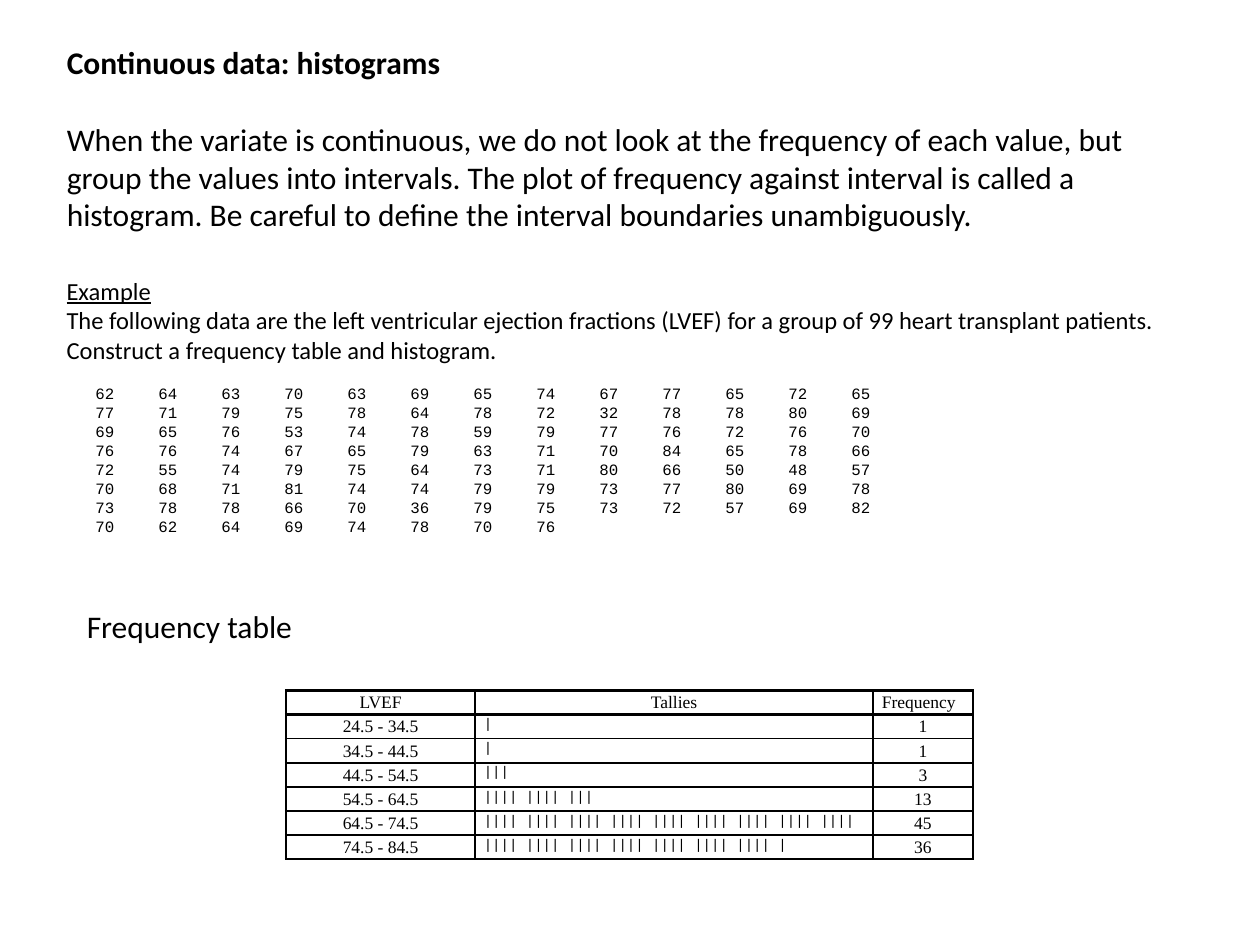
from lxml import etree
from pptx import Presentation, util as u
from pptx.dml.color import RGBColor
from pptx.enum import text
from pptx.oxml.ns import qn

INK = "000000"
LEFT, CENTER, JUSTIFY = text.PP_ALIGN.LEFT, text.PP_ALIGN.CENTER, text.PP_ALIGN.JUSTIFY

TITLE = "Continuous data: histograms"
INTRO = ("When the variate is continuous, we do not look at the frequency of each value, "
         "but group the values into intervals. The plot of frequency against interval is "
         "called a histogram. Be careful to define the interval boundaries unambiguously.")
EXAMPLE = [
    "Example",
    "The following data are the left ventricular ejection fractions (LVEF) for a group of "
    "99 heart transplant patients.",
    "Construct a frequency table and histogram.",
]
FRACTIONS = [
    "62 64 63 70 63 69 65 74 67 77 65 72 65",
    "77 71 79 75 78 64 78 72 32 78 78 80 69",
    "69 65 76 53 74 78 59 79 77 76 72 76 70",
    "76 76 74 67 65 79 63 71 70 84 65 78 66",
    "72 55 74 79 75 64 73 71 80 66 50 48 57",
    "70 68 71 81 74 74 79 79 73 77 80 69 78",
    "73 78 78 66 70 36 79 75 73 72 57 69 82",
    "70 62 64 69 74 78 70 76",
]
TABLE_LABEL = "Frequency table"
HEADINGS = ["LVEF", "Tallies", "Frequency"]
FIRST_BOUND, INTERVAL = 24.5, 10
FREQUENCIES = [1, 1, 3, 13, 45, 36]

COLUMN_WIDTHS = [1.5, 3.16, 0.79]
ROW_HEIGHT = 1.34 / 7
DATA_INDENT, DATA_STEP = 0.23, 0.45

HEADLINE = {"name": "Calibri", "size": u.Pt(18), "bold": True}
BODY = {"name": "Calibri", "size": u.Pt(18), "bold": False}
SMALL = {"name": "Calibri", "size": u.Pt(14)}
DATA = {"name": "Courier New", "size": u.Pt(9)}
CELL = {"name": "Times New Roman", "size": u.Pt(10), "bold": False}
TALLY = {"name": "Courier New", "size": u.Pt(8), "bold": False}


def inches(*lengths):
    return [u.Inches(length) for length in lengths]


def write(paragraph, words, font, **layout):
    run = paragraph.add_run()
    run.text = words
    for key, value in font.items():
        setattr(run.font, key, value)
    run.font.color.rgb = RGBColor.from_string(INK)
    for key, value in layout.items():
        setattr(paragraph, key, value)


def place(shape, *box):
    shape.left, shape.top, shape.width, shape.height = inches(*box)
    frame = shape.text_frame
    frame.word_wrap = True
    frame.auto_size = text.MSO_AUTO_SIZE.NONE
    frame.vertical_anchor = text.MSO_ANCHOR.TOP
    return frame


def remove_bullet(paragraph):
    properties = paragraph._p.get_or_add_pPr()
    properties.set("marL", "0")
    properties.set("indent", "0")
    etree.SubElement(properties, qn("a:buNone"))


def set_tab_stops(paragraph, indent, step, count):
    """Indent the paragraph and put one tab stop at each further column."""
    properties = paragraph._p.get_or_add_pPr()
    properties.set("marL", str(u.Inches(indent)))
    properties.set("indent", "0")
    stops = etree.SubElement(properties, qn("a:tabLst"))
    for column in range(1, count):
        etree.SubElement(stops, qn("a:tab"), algn="l",
                         pos=str(u.Inches(indent + column * step)))


def draw_borders(cell, widths):
    """Draw left, right, top and bottom borders with the given widths in points."""
    properties = cell._tc.get_or_add_tcPr()
    for side, width in zip(("lnL", "lnR", "lnT", "lnB"), widths):
        line = etree.SubElement(properties, qn("a:" + side), w=str(u.Pt(width)))
        fill = etree.SubElement(line, qn("a:solidFill"))
        etree.SubElement(fill, qn("a:srgbClr"), val=INK)


def tally(count):
    """Show each full five as a group of four strokes."""
    fives, rest = divmod(count, 5)
    return " ".join(["||||"] * fives + ["|" * rest] * bool(rest))


def add_example(slide):
    example = place(slide.shapes.add_textbox(0, 0, 0, 0), 0.43, 2.14, 9.37, 2.71)
    for number, line in enumerate(EXAMPLE):
        paragraph = example.add_paragraph() if number else example.paragraphs[0]
        write(paragraph, line, SMALL | {"underline": number == 0})
    for number, line in enumerate(FRACTIONS):
        values = line.split()
        paragraph = example.add_paragraph()
        write(paragraph, "\t".join(values), DATA, line_spacing=u.Pt(10.85),
              space_before=u.Pt(0 if number else 11))
        set_tab_stops(paragraph, DATA_INDENT, DATA_STEP, len(values))


def add_frequency_table(slide):
    rows = [HEADINGS]
    for number, count in enumerate(FREQUENCIES):
        low = FIRST_BOUND + number * INTERVAL
        rows.append([f"{low} - {low + INTERVAL}", tally(count), str(count)])
    last_row, last_column = len(rows) - 1, len(HEADINGS) - 1

    table = slide.shapes.add_table(
        len(rows), len(HEADINGS),
        *inches(2.27, 5.48, sum(COLUMN_WIDTHS), ROW_HEIGHT * len(rows))).table
    table.first_row = table.horz_banding = False
    for column, width in zip(table.columns, COLUMN_WIDTHS):
        column.width = u.Inches(width)
    for r, values in enumerate(rows):
        table.rows[r].height = u.Inches(ROW_HEIGHT)
        for c, value in enumerate(values):
            cell = table.cell(r, c)
            cell.margin_left = cell.margin_right = u.Inches(0.07)
            cell.margin_top = cell.margin_bottom = 0
            heavy = (c == 0, c == last_column, r <= 1, r in (0, last_row))
            draw_borders(cell, [1.5 if edge else 1 for edge in heavy])
            cell.fill.background()
            is_tally = r > 0 and c == 1
            is_justified = is_tally or (r, c) == (0, last_column)
            write(cell.text_frame.paragraphs[0], value, TALLY if is_tally else CELL,
                  alignment=JUSTIFY if is_justified else CENTER, line_spacing=1.15)


def main():
    deck = Presentation()
    deck.slide_width, deck.slide_height = inches(10, 7.5)
    slide = deck.slides.add_slide(deck.slide_layouts[1])
    title, body = slide.placeholders

    heading = place(title, 0.43, 0.29, 9.21, 0.4)
    write(heading.paragraphs[0], TITLE, HEADLINE, alignment=LEFT)
    intro = place(body, 0.43, 0.9, 9.21, 1.01).paragraphs[0]
    write(intro, INTRO, BODY, space_before=u.Pt(0))
    remove_bullet(intro)

    add_example(slide)
    label = place(slide.shapes.add_textbox(0, 0, 0, 0), 0.59, 4.77, 1.85, 0.4)
    label.word_wrap = False
    write(label.paragraphs[0], TABLE_LABEL, BODY)
    add_frequency_table(slide)
    deck.save("out.pptx")


if __name__ == "__main__":
    main()
